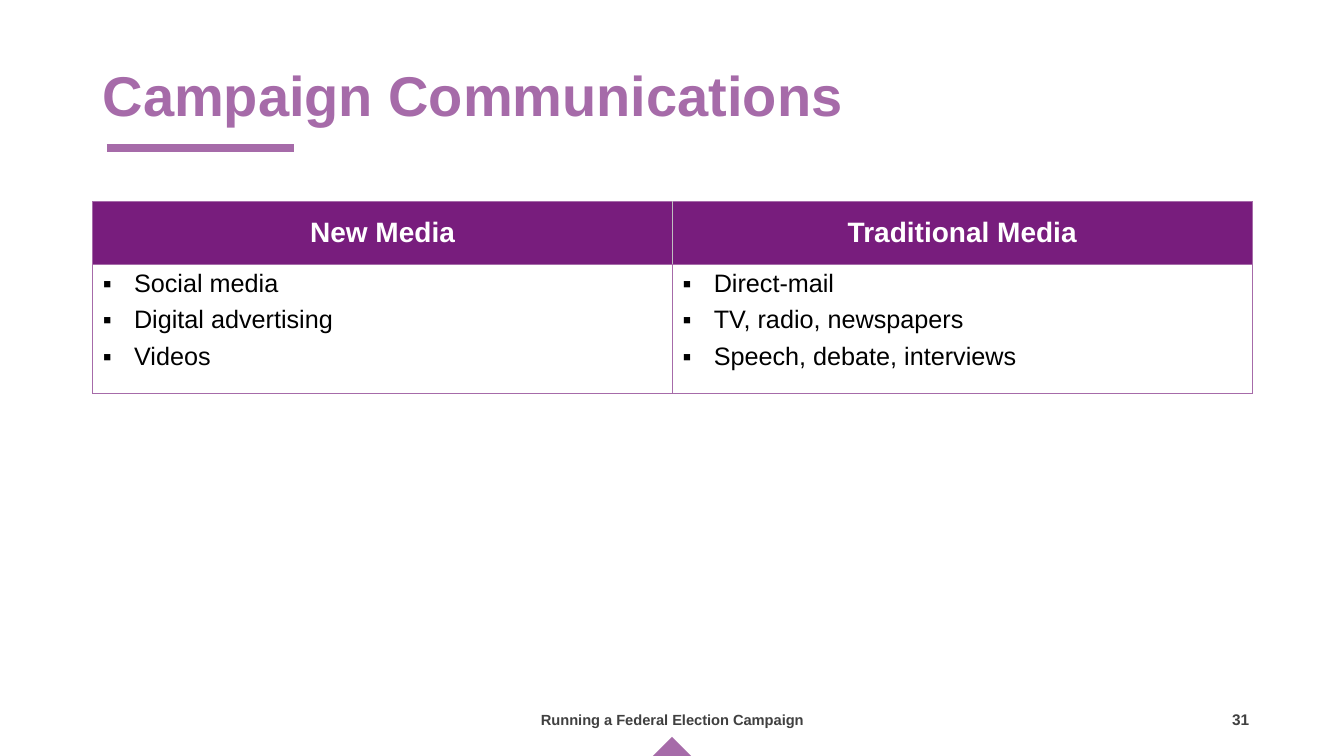
from lxml.etree import SubElement
from pptx import Presentation
from pptx.dml.color import RGBColor
from pptx.enum.shapes import MSO_CONNECTOR as Connector, MSO_SHAPE as Shape
from pptx.enum.text import MSO_ANCHOR as Anchor, PP_ALIGN as Align
from pptx.oxml.ns import qn
from pptx.util import Inches, Pt

PURPLE = RGBColor(0x78, 0x1D, 0x7D)
LILAC = RGBColor(0xA6, 0x6B, 0xA9)
SILVER = RGBColor(0xBF, 0xBF, 0xBF)
CHARCOAL = RGBColor(0x40, 0x40, 0x40)
BLACK = RGBColor(0, 0, 0)
WHITE = RGBColor(0xFF, 0xFF, 0xFF)

MEDIA = {
    "New Media": ["Social media", "Digital advertising", "Videos"],
    "Traditional Media": ["Direct-mail", "TV, radio, newspapers",
                          "Speech, debate, interviews"],
}


def write(paragraph, text, size=18, color=BLACK, bold=False, align=Align.LEFT,
          line_spacing=None, space_after=None, bullet=None):
    """Fill a paragraph with one formatted run."""
    run = paragraph.add_run()
    run.text = text
    font = run.font
    font.name, font.size, font.bold = "Arial", Pt(size), bold
    font.color.rgb = color
    paragraph.alignment = align
    if line_spacing:
        paragraph.line_spacing = line_spacing
    if space_after:
        paragraph.space_after = Pt(space_after)
    if bullet:
        properties = paragraph._p.get_or_add_pPr()
        properties.set("marL", str(Inches(0.31)))
        properties.set("indent", str(-Inches(0.31)))
        SubElement(properties, qn("a:buFont"), typeface="Arial")
        SubElement(properties, qn("a:buChar"), char=bullet)


def edge(cell, side, color, width):
    """Draw one border of a cell; side is L, R, T or B."""
    line = SubElement(cell._tc.get_or_add_tcPr(), qn(f"a:ln{side}"), w=str(Pt(width)))
    fill = SubElement(line, qn("a:solidFill"))
    SubElement(fill, qn("a:srgbClr"), val=str(color))


class CampaignSlide:
    """Places elements by percent shares of the slide's width and height."""

    def __init__(self, deck):
        self.width, self.height = deck.slide_width, deck.slide_height
        self.shapes = deck.slides.add_slide(deck.slide_layouts[6]).shapes

    def x(self, share):
        return round(self.width * share / 100)

    def y(self, share):
        return round(self.height * share / 100)

    def box(self, left, top, width, height):
        return self.x(left), self.y(top), self.x(width), self.y(height)

    def text(self, area, text, anchor=Anchor.MIDDLE, **style):
        frame = self.shapes.add_textbox(*self.box(*area)).text_frame
        frame.word_wrap = True
        frame.vertical_anchor = anchor
        write(frame.paragraphs[0], text, **style)

    def marker(self, area, preset, color):
        marker = self.shapes.add_shape(preset, *self.box(*area))
        marker.shadow.inherit = False
        marker.fill.solid()
        marker.fill.fore_color.rgb = color
        marker.line.fill.background()

    def rule(self, left, right, level, color, width):
        rule = self.shapes.add_connector(Connector.STRAIGHT, self.x(left), self.y(level),
                                         self.x(right), self.y(level))
        rule.line.color.rgb = color
        rule.line.width = Pt(width)
        SubElement(rule._element.spPr, qn("a:effectLst"))

    def table(self, left, top, width, row_heights, columns):
        area = self.box(left, top, width, sum(row_heights))
        table = self.shapes.add_table(2, len(columns), *area).table
        table.horz_banding = False
        for row, height in zip(table.rows, row_heights):
            row.height = self.y(height)
        last = len(columns) - 1
        for index, (heading, items) in enumerate(columns.items()):
            head, body = table.cell(0, index), table.cell(1, index)
            for cell in (head, body):
                for side, outer in (("L", index == 0), ("R", index == last),
                                    ("T", True), ("B", True)):
                    divider = cell is head and not outer
                    edge(cell, side, *((SILVER, 0.75) if divider else (LILAC, 1)))
            head.fill.solid()
            head.fill.fore_color.rgb = PURPLE
            head.vertical_anchor = Anchor.MIDDLE
            write(head.text_frame.paragraphs[0], heading, size=20, color=WHITE,
                  bold=True, align=Align.CENTER)
            body.fill.background()
            frame = body.text_frame
            for number, item in enumerate(items):
                paragraph = frame.add_paragraph() if number else frame.paragraphs[0]
                write(paragraph, item, space_after=6, bullet="▪")


def main():
    deck = Presentation()
    deck.slide_width, deck.slide_height = Inches(13.33), Inches(7.5)
    slide = CampaignSlide(deck)

    # Footer
    footer = dict(color=CHARCOAL, bold=True, align=Align.CENTER)
    slide.text((88.9, 93.33, 6.83, 3.87), "31", anchor=Anchor.TOP, size=11, **footer)
    slide.text((33.16, 92.53, 33.76, 5.33), "Running a Federal Election Campaign",
               size=10.5, **footer)
    slide.marker((48.5, 97.47, 3, 2.67), Shape.ISOSCELES_TRIANGLE, LILAC)

    # Title and its underline
    slide.rule(7.95, 21.9, 19.6, LILAC, 6)
    slide.text((6.9, 5.33, 86.27, 15.33), "Campaign Communications",
               size=40, color=LILAC, bold=True, line_spacing=0.9)

    # Media comparison
    slide.table(6.9, 26.67, 86.27, (8.27, 17.07), MEDIA)

    deck.save("out.pptx")


if __name__ == "__main__":
    main()
